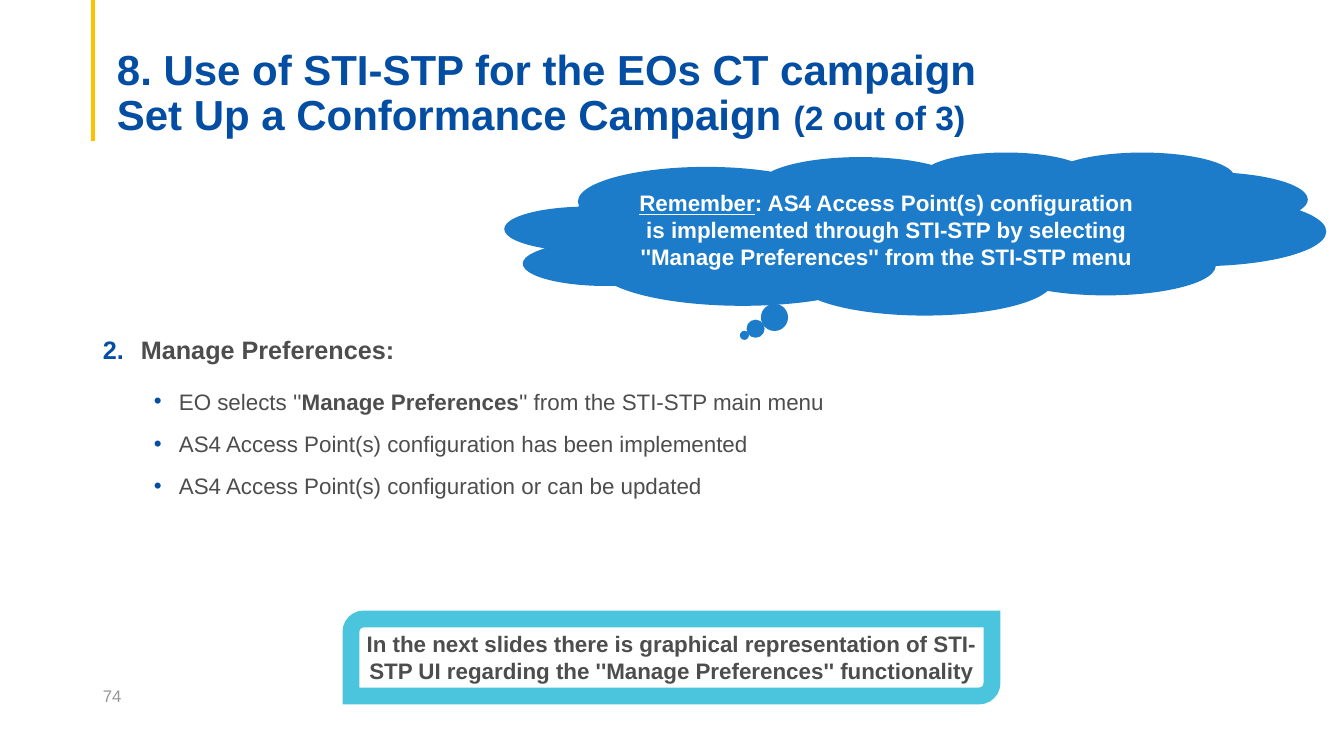
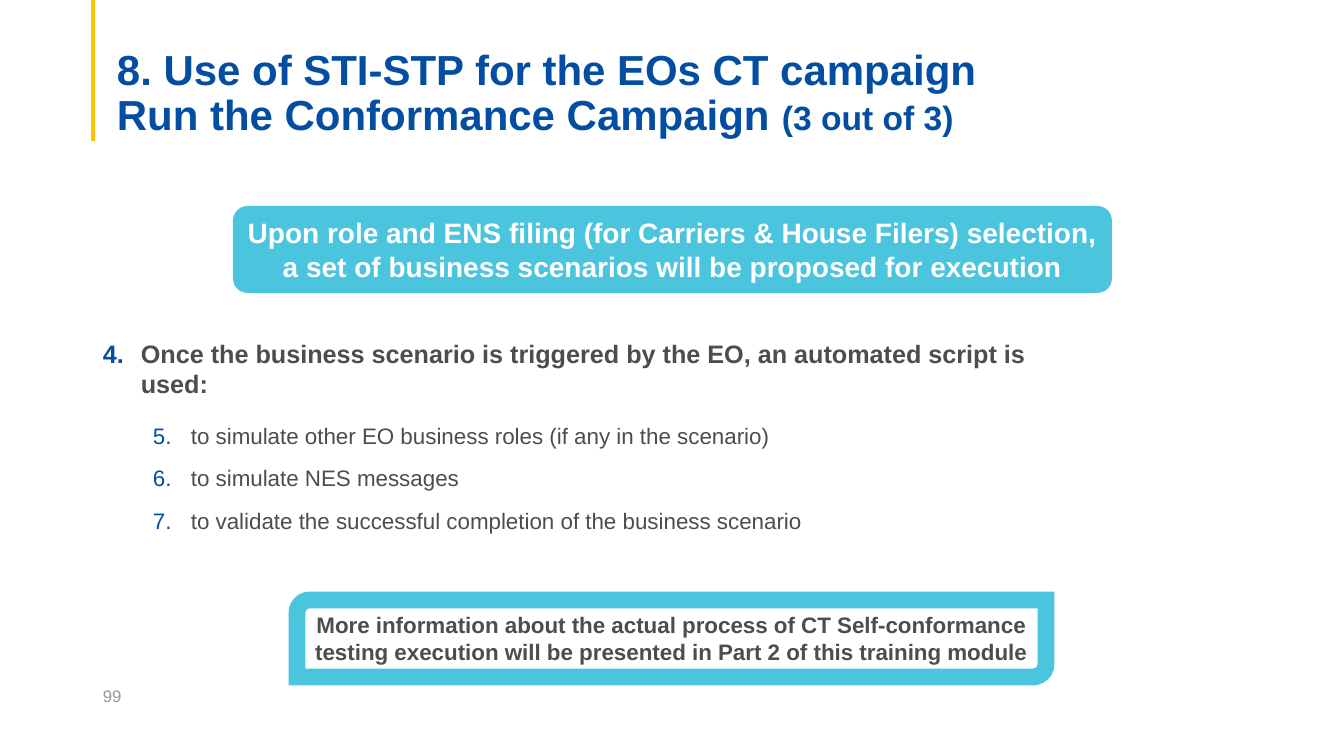
from pptx import Presentation
from pptx.dml.color import RGBColor
from pptx.enum.shapes import MSO_CONNECTOR, MSO_SHAPE
from pptx.enum.text import MSO_ANCHOR, PP_ALIGN
from pptx.oxml.ns import qn
from pptx.util import Emu, Pt
from lxml.etree import SubElement

SCALE = 914400 / 100.8
FONT = "Arial"
COLORS = {
    "blue": "034EA2",
    "cloud": "1C7CCA",
    "cyan": "4BC5DE",
    "gold": "FFC000",
    "text": "4D4D4D",
    "number": "979797",
    "white": "FFFFFF",
}

SLIDES = [
    {
        "number": "74",
        "title": "Set Up a Conformance Campaign ",
        "part": "(2 out of 3)",
        "banner": {
            "shape": MSO_SHAPE.CLOUD_CALLOUT,
            "bounds": (505, 152, 821, 163),
            "fill": "cloud",
            "size": 16,
            "text": [
                ("Remember", {"underline": True}),
                (": AS4 Access Point(s) configuration is implemented through STI-STP "
                 "by selecting ''Manage Preferences'' from the STI-STP menu", {}),
            ],
        },
        "body": (93, 329, 1199, 182),
        "step": 2,
        "heading": "Manage Preferences:",
        "list": {"marker": "•", "indent": 76, "hang": 25},
        "items": [
            [
                ("EO selects ''", {}),
                ("Manage Preferences", {"bold": True}),
                ("'' from the STI-STP main menu", {}),
            ],
            "AS4 Access Point(s) configuration has been implemented",
            "AS4 Access Point(s) configuration or can be updated",
        ],
        "note_bounds": (351, 619, 641, 77),
        "note": "In the next slides there is graphical representation of STI-STP UI "
                "regarding the ''Manage Preferences'' functionality",
    },
    {
        "number": "99",
        "title": "Run the Conformance Campaign ",
        "part": "(3 out of 3)",
        "banner": {
            "shape": MSO_SHAPE.ROUNDED_RECTANGLE,
            "bounds": (233, 206, 879, 87),
            "fill": "cyan",
            "size": 20,
            "text": "Upon role and ENS filing (for Carriers & House Filers) selection, "
                    "a set of business scenarios will be proposed for execution",
        },
        "body": (93, 333, 991, 201),
        "step": 4,
        "heading": "Once the business scenario is triggered by the EO, "
                   "an automated script is used:",
        "list": {"marker": "number", "indent": 88, "hang": 38},
        "items": [
            "to simulate other EO business roles (if any in the scenario)",
            "to simulate NES messages",
            "to validate the successful completion of the business scenario",
        ],
        "note_bounds": (297, 600, 749, 77),
        "note": "More information about the actual process of CT Self-conformance "
                "testing execution will be presented in Part 2 of this training module",
    },
]


def add_box(page, bounds, shape=None, fill=None, anchor=MSO_ANCHOR.MIDDLE):
    place = [Emu(round(value * SCALE)) for value in bounds]
    if shape is None:
        box = page.shapes.add_textbox(*place)
    else:
        box = page.shapes.add_shape(shape, *place)
        box.shadow.inherit = False
        box.line.fill.background()
        if fill:
            box.fill.solid()
            box.fill.fore_color.rgb = RGBColor.from_string(COLORS[fill])
        else:
            box.fill.background()
    box.text_frame.word_wrap = True
    box.text_frame.vertical_anchor = anchor
    return box


def write(box, text, size=16, color="text", bold=False, align=PP_ALIGN.LEFT,
          leading=None, before=0, after=0, marker=None, start=1, indent=0, hang=0):
    frame = box.text_frame
    para = frame.paragraphs[0]
    if para.runs:
        para = frame.add_paragraph()
    if marker:
        props = para._p.get_or_add_pPr()
        props.set("marL", str(round(indent * SCALE)))
        props.set("indent", str(round(-hang * SCALE)))
        tint = SubElement(props, qn("a:buClr"))
        SubElement(tint, qn("a:srgbClr"), val=COLORS["blue"])
        SubElement(props, qn("a:buFont"), typeface=FONT)
        if marker == "number":
            SubElement(props, qn("a:buAutoNum"), type="arabicPeriod", startAt=str(start))
        else:
            SubElement(props, qn("a:buChar"), char=marker)
    para.alignment = align
    para.line_spacing = leading
    para.space_before = Pt(before)
    para.space_after = Pt(after)
    for words, changes in [(text, {})] if isinstance(text, str) else text:
        span = para.add_run()
        span.text = words
        span.font.name = FONT
        span.font.size = Pt(changes.get("size", size))
        span.font.bold = changes.get("bold", bold)
        span.font.underline = changes.get("underline", False)
        span.font.color.rgb = RGBColor.from_string(COLORS[color])


deck = Presentation()
deck.slide_width = Emu(round(1344 * SCALE))
deck.slide_height = Emu(round(756 * SCALE))

for content in SLIDES:
    page = deck.slides.add_slide(deck.slide_layouts[6])

    rule_x = Emu(round(93 * SCALE))
    rule = page.shapes.add_connector(
        MSO_CONNECTOR.STRAIGHT, rule_x, 0, rule_x, Emu(round(141 * SCALE)))
    rule.line.color.rgb = RGBColor.from_string(COLORS["gold"])
    rule.line.width = Pt(2.25)
    SubElement(rule._element.spPr, qn("a:effectLst"))

    number = add_box(page, (93, 676, 302, 40))
    write(number, content["number"], size=12, color="number")

    title = add_box(page, (107, 53, 1159, 87), anchor=MSO_ANCHOR.BOTTOM)
    title.text_frame.margin_bottom = 0
    title_lines = [
        "8. Use of STI-STP for the EOs CT campaign",
        [(content["title"], {}), (content["part"], {"size": 24})],
    ]
    for line in title_lines:
        write(title, line, size=30, color="blue", bold=True, leading=0.9)

    banner = content["banner"]
    callout = add_box(page, banner["bounds"], banner["shape"], banner["fill"])
    write(callout, banner["text"], size=banner["size"], color="white", bold=True,
          align=PP_ALIGN.CENTER)

    body = add_box(page, content["body"], anchor=MSO_ANCHOR.TOP)
    write(body, content["heading"], size=18, bold=True, after=12,
          marker="number", start=content["step"], indent=38, hang=38)
    for item in content["items"]:
        write(body, item, before=5, after=6, **content["list"])

    note = add_box(page, content["note_bounds"], MSO_SHAPE.ROUND_2_DIAG_RECTANGLE)
    note.line.color.rgb = RGBColor.from_string(COLORS["cyan"])
    note.line.width = Pt(12)
    SubElement(note._element.spPr.find(qn("a:ln")), qn("a:miter"), lim="800000")
    write(note, content["note"], bold=True, align=PP_ALIGN.CENTER)

deck.save("out.pptx")
